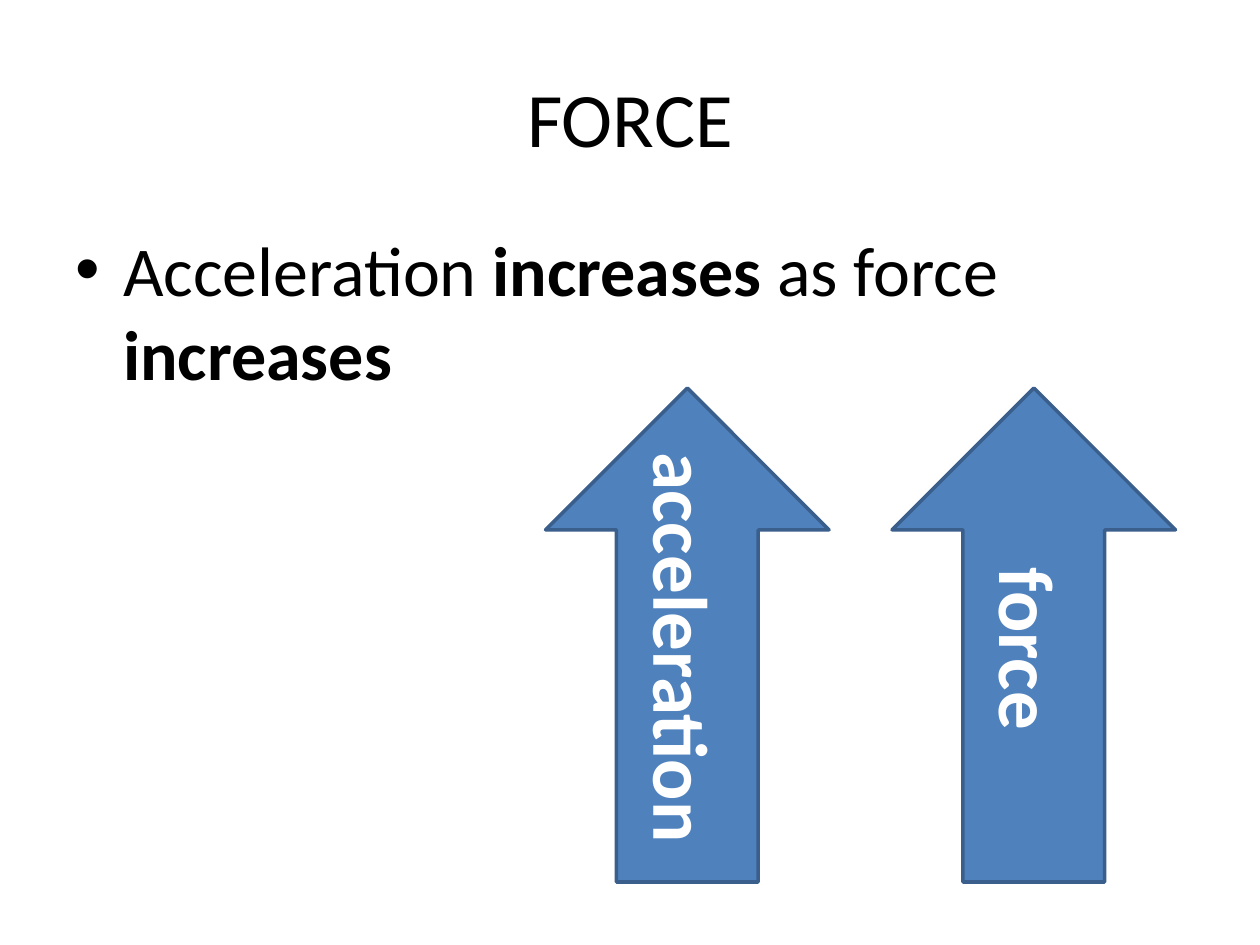
from lxml import etree
from pptx import Presentation
from pptx.dml.color import RGBColor
from pptx.enum.shapes import MSO_SHAPE
from pptx.enum.text import MSO_ANCHOR, MSO_AUTO_SIZE, PP_ALIGN
from pptx.oxml.ns import qn
from pptx.util import Inches, Pt

BLACK = RGBColor(0x00, 0x00, 0x00)
WHITE = RGBColor(0xFF, 0xFF, 0xFF)
BLUE = RGBColor(0x4F, 0x81, 0xBD)
DARK_BLUE = RGBColor(0x3A, 0x5F, 0x8C)
DOWN_ARROW = MSO_SHAPE.DOWN_ARROW
MIDDLE = MSO_ANCHOR.MIDDLE
CENTER = PP_ALIGN.CENTER
FIT_SHAPE = MSO_AUTO_SIZE.SHAPE_TO_FIT_TEXT


def add_span(para, text, color, size, bold=False):
    span = para.add_run()
    span.text = text
    span.font.color.rgb = color
    font_format = {"name": "Calibri", "size": Pt(size), "bold": bold}
    for name, value in font_format.items():
        setattr(span.font, name, value)


deck = Presentation()
deck.slide_width = Inches(10)
deck.slide_height = Inches(7.5)
page = deck.slides.add_slide(deck.slide_layouts[5])

title = page.shapes.title
title_place = {"left": 0.5, "top": 0.3, "width": 9, "height": 1.25}
for name, value in title_place.items():
    setattr(title, name, Inches(value))
title.text_frame.vertical_anchor = MIDDLE
title_para = title.text_frame.paragraphs[0]
title_para.alignment = CENTER
add_span(title_para, "FORCE", BLACK, 44)

body = page.shapes.add_textbox(Inches(0.5), Inches(1.75), Inches(9), Inches(4.95))
body.text_frame.word_wrap = True
body_para = body.text_frame.paragraphs[0]
body_para.space_before = Pt(8)
bullet_format = body_para._p.get_or_add_pPr()
bullet_format.set("marL", str(Inches(0.38)))
bullet_format.set("indent", str(Inches(-0.38)))
etree.SubElement(bullet_format, qn("a:buFont")).set("typeface", "Arial")
etree.SubElement(bullet_format, qn("a:buChar")).set("char", "•")
sentence = [
    ("Acceleration ", False),
    ("increases ", True),
    ("as force ", False),
    ("increases", True),
]
for text, bold in sentence:
    add_span(body_para, text, BLACK, 40, bold)

for left in (4.33, 7.08):
    arrow = page.shapes.add_shape(
        DOWN_ARROW, Inches(left), Inches(3.08), Inches(2.25), Inches(3.92)
    )
    arrow.rotation = 180
    arrow.shadow.inherit = False
    arrow.fill.solid()
    arrow.fill.fore_color.rgb = BLUE
    arrow.line.color.rgb = DARK_BLUE
    arrow.line.width = Pt(2)

for text, left, width in (("acceleration", 3.76, 3.33), ("force", 7.42, 1.5)):
    label = page.shapes.add_textbox(
        Inches(left), Inches(4.74), Inches(width), Inches(0.84)
    )
    label.rotation = 90
    label.text_frame.word_wrap = False
    label.text_frame.auto_size = FIT_SHAPE
    add_span(label.text_frame.paragraphs[0], text, WHITE, 44, True)

deck.save("out.pptx")
